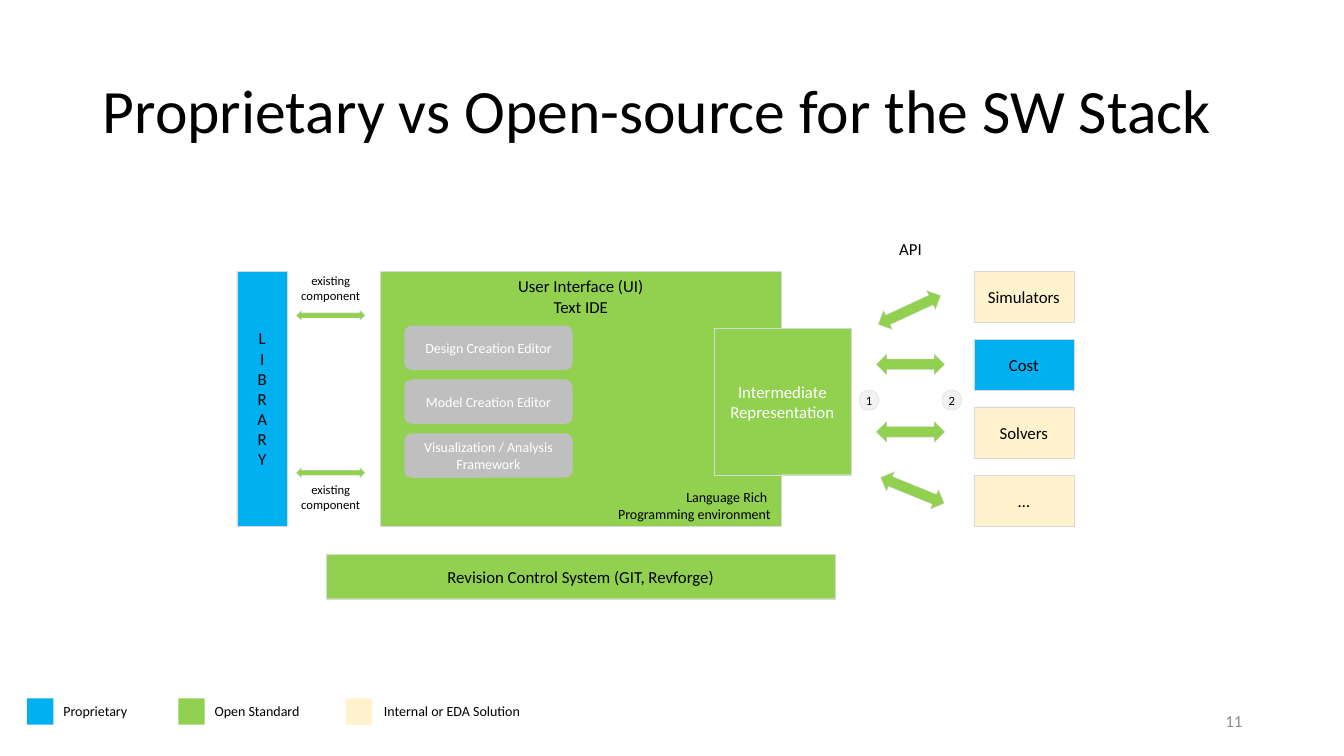
from collections import namedtuple
from dataclasses import dataclass

from pptx import Presentation
from pptx.dml.color import RGBColor
from pptx.enum.shapes import MSO_SHAPE
from pptx.enum.text import MSO_ANCHOR, MSO_AUTO_SIZE, PP_ALIGN
from pptx.util import Pt

PX = 9144
RECT, ROUNDED = MSO_SHAPE.RECTANGLE, MSO_SHAPE.ROUNDED_RECTANGLE
OVAL, ARROW = MSO_SHAPE.OVAL, MSO_SHAPE.LEFT_RIGHT_ARROW
LEFT, CENTER, RIGHT = PP_ALIGN.LEFT, PP_ALIGN.CENTER, PP_ALIGN.RIGHT
TOP, MIDDLE = MSO_ANCHOR.TOP, MSO_ANCHOR.MIDDLE
GROW = MSO_AUTO_SIZE.SHAPE_TO_FIT_TEXT

Box = namedtuple("Box", "x y w h")


@dataclass(frozen=True)
class Theme:
    """Colours and type sizes of the slide."""
    font: str = "Calibri"
    ink: str = "000000"
    white: str = "FFFFFF"
    page_number: str = "8C8C8C"
    proprietary: str = "00B0F0"
    open_standard: str = "92D050"
    internal: str = "FFF2CC"
    editor: str = "BFBFBF"
    badge: str = "F2F2F2"
    outline: str = "D9D9D9"
    title: int = 44
    body: int = 12
    label: int = 10
    small: int = 9


THEME = Theme()


def emu(box):
    """Turn a box in px into EMU lengths."""
    return [round(length * PX) for length in box]


def write(frame, text, size, color, align, anchor):
    """Fill a text frame, one paragraph per line."""
    frame.text = text
    frame.vertical_anchor = anchor
    for paragraph in frame.paragraphs:
        paragraph.alignment = align
        paragraph.font.name = THEME.font
        paragraph.font.size = Pt(size)
        paragraph.font.color.rgb = RGBColor.from_string(color)


def block(shapes, box, fill, text="", kind=RECT, size=THEME.body,
          color=THEME.ink, anchor=MIDDLE, outlined=True):
    """Add a filled shape with centred text."""
    shape = shapes.add_shape(kind, *emu(box))
    shape.shadow.inherit = False
    shape.fill.solid()
    shape.fill.fore_color.rgb = RGBColor.from_string(fill)
    if outlined:
        shape.line.color.rgb = RGBColor.from_string(THEME.outline)
        shape.line.width = Pt(0.25)
    else:
        shape.line.fill.background()
    if text:
        shape.text_frame.word_wrap = True
        write(shape.text_frame, text, size, color, CENTER, anchor)
    return shape


def label(shapes, box, text, size, align=LEFT, anchor=TOP, wrap=False,
          color=THEME.ink):
    """Add a text box."""
    frame = shapes.add_textbox(*emu(box)).text_frame
    frame.word_wrap = wrap
    frame.auto_size = GROW
    write(frame, text, size, color, align, anchor)


def arrow(shapes, box, rotation=0):
    """Add a double-headed arrow."""
    block(shapes, box, THEME.open_standard, kind=ARROW).rotation = rotation


def heading(slide, box):
    """Place the title."""
    title = slide.shapes.title
    title.left, title.top, title.width, title.height = emu(box)
    write(title.text_frame, "Proprietary vs Open-source for the SW Stack",
          THEME.title, THEME.ink, LEFT, MIDDLE)
    title.text_frame.paragraphs[0].line_spacing = 0.9


def library(shapes, box):
    """Draw the library column and its links to the interface."""
    column = block(shapes, Box(box.x, box.y, 50, box.h), THEME.proprietary,
                   "LIBRARY")
    column.text_frame._txBody.bodyPr.set("vert", "wordArtVert")
    for arrow_y, label_y in ((39, -3), (195, 204)):
        arrow(shapes, Box(box.x + 59, box.y + arrow_y, 68, 10))
        label(shapes, Box(box.x + 46, box.y + label_y, 94, 40),
              "existing component", THEME.small, CENTER, wrap=True)


def interface(shapes, box):
    """Draw the user interface, its editors and the representation."""
    block(shapes, box, THEME.open_standard, "User Interface (UI)\nText IDE",
          anchor=TOP)
    block(shapes, Box(box.x + 331, box.y + 57, 136, 145), THEME.open_standard,
          "Intermediate Representation", color=THEME.white)
    label(shapes, Box(box.x + 223, box.y + 210, 174, 44),
          "Language Rich \nProgramming environment", THEME.label, RIGHT, MIDDLE)
    editors = shapes.add_group_shape().shapes
    for row, name in enumerate(("Design Creation Editor",
                                "Model Creation Editor",
                                "Visualization / Analysis Framework")):
        block(editors, Box(box.x + 24, box.y + 54 + row * 53.5, 167, 44),
              THEME.editor, name, ROUNDED, THEME.label, THEME.white,
              outlined=False)


def api(shapes, box):
    """Draw the API links and the numbered ends."""
    label(shapes, Box(box.x + 30, box.y - 37, 43, 30), "API", THEME.body)
    for x, y, rotation in ((16, 28, -24.8), (17, 82, 0),
                           (17, 149, 0), (19, 207, 22.2)):
        arrow(shapes, Box(box.x + x, box.y + y, 68, 21), rotation)
    for number, x in (("1", 0), ("2", box.w - 20)):
        badge = block(shapes, Box(box.x + x, box.y + 118, 20, 20), THEME.badge,
                      number, OVAL, THEME.small)
        frame = badge.text_frame
        frame.margin_left = frame.margin_right = 0
        frame.margin_top = frame.margin_bottom = 0


def tools(shapes, box):
    """Spread the tool boxes evenly over the height."""
    entries = (("Simulators", THEME.internal), ("Cost", THEME.proprietary),
               ("Solvers", THEME.internal), ("…", THEME.internal))
    height = 51
    pitch = (box.h - height) / (len(entries) - 1)
    for row, (name, fill) in enumerate(entries):
        block(shapes, Box(box.x, box.y + row * pitch, box.w, height), fill, name)


def legend(shapes, box):
    """Explain the three colours."""
    for x, gap, width, name, fill in (
            (0, 0, 88, "Proprietary", THEME.proprietary),
            (150, 0, 106, "Open Standard", THEME.open_standard),
            (316, 2, 157, "Internal or EDA Solution", THEME.internal)):
        entry = shapes.add_group_shape().shapes
        block(entry, Box(box.x + x, box.y + 1, 26, 26), fill, outlined=False)
        label(entry, Box(box.x + x + 26 + gap, box.y, width, box.h), name,
              THEME.label)


def main():
    """Build and save the slide."""
    deck = Presentation()
    deck.slide_width, deck.slide_height = 1333 * PX, 750 * PX
    slide = deck.slides.add_slide(deck.slide_layouts[5])
    shapes = slide.shapes
    heading(slide, Box(92, 40, 1150, 145))
    library(shapes, Box(235, 269, 142, 253))
    interface(shapes, Box(377, 269, 398, 253))
    api(shapes, Box(852, 269, 102, 253))
    tools(shapes, Box(966, 269, 99, 253))
    block(shapes, Box(324, 550, 504, 44), THEME.open_standard,
          "Revision Control System (GIT, Revforge)")
    legend(shapes, Box(27, 692, 501, 28))
    label(shapes, Box(942, 695, 300, 40), "11", THEME.body, RIGHT, MIDDLE,
          wrap=True, color=THEME.page_number)
    deck.save("out.pptx")


if __name__ == "__main__":
    main()
